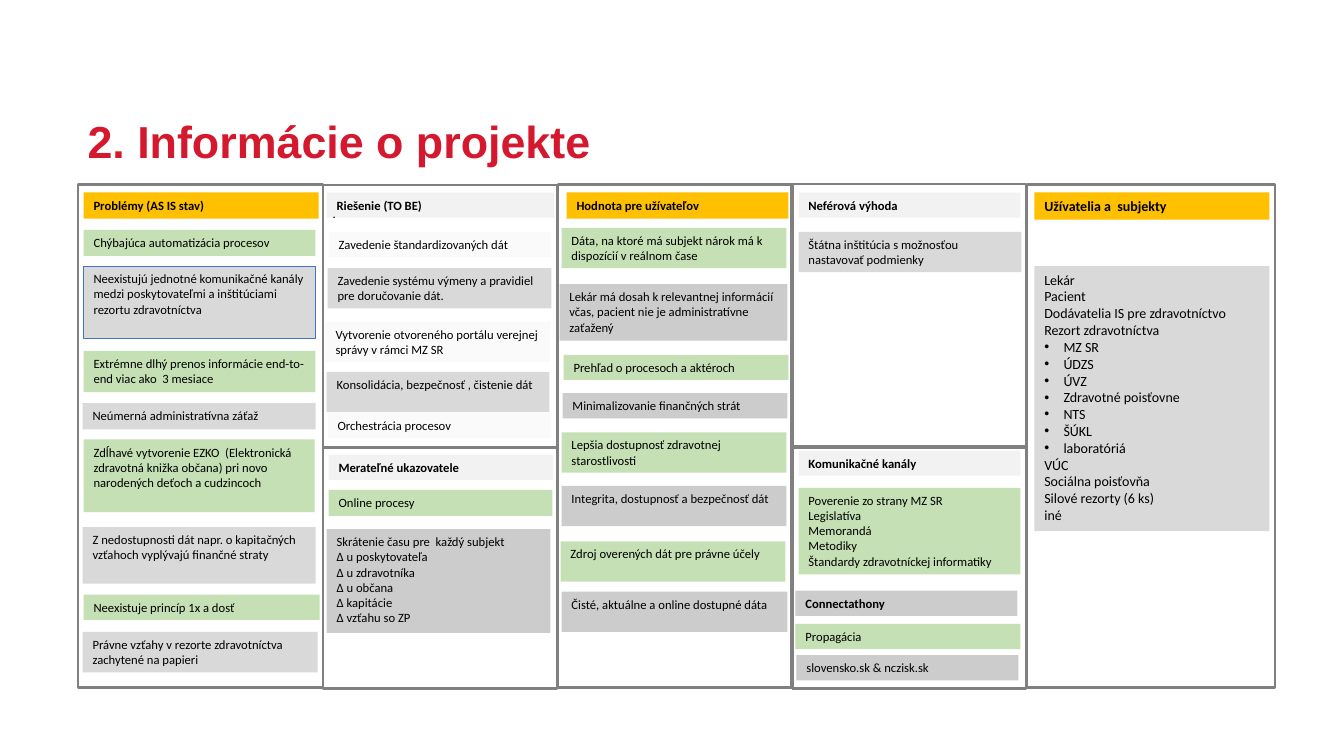
from dataclasses import dataclass

from lxml.etree import SubElement
from pptx import Presentation
from pptx.dml.color import RGBColor
from pptx.enum.shapes import MSO_SHAPE as SHAPE
from pptx.enum.text import MSO_ANCHOR as ANCHOR, PP_ALIGN as ALIGN
from pptx.oxml.ns import qn
from pptx.util import Inches, Pt


@dataclass(frozen=True)
class Theme:
    red: str = "D4182E"
    black: str = "000000"
    frame: str = "808080"
    blue: str = "4472C4"
    gold: str = "FFC000"
    head: str = "F2F2F2"
    pale: str = "FAFAFA"
    green: str = "C5E0B4"
    light: str = "D9D9D9"
    grey: str = "CCCCCC"
    title_font: str = "Arial"
    font: str = "Calibri"
    title_size: float = 32
    large: float = 10
    body: float = 9


T = Theme()

# Each region: its box, then cards as (dx, dy, width, height, fill, text, format).
# A line that starts with "• " becomes a bulleted paragraph.
PROBLEMS = (0.77, 1.83, 2.43, 4.99), [
    (0.06, 0.08, 2.33, 0.26, T.gold, "Problémy (AS IS stav)", {"bold": True}),
    (0.06, 0.45, 2.3, 0.26, T.green, "Chýbajúca automatizácia procesov", {}),
    (0.06, 0.81, 2.3, 0.72, T.light, "Neexistujú jednotné komunikačné kanály medzi "
     "poskytovateľmi a inštitúciami rezortu zdravotníctva", {"line": T.blue}),
    (0.06, 1.65, 2.3, 0.41, T.green,
     "Extrémne dlhý prenos informácie end-to-end viac ako  3 mesiace", {}),
    (0.05, 2.17, 2.31, 0.26, T.light, "Neúmerná administratívna záťaž", {}),
    (0.06, 2.53, 2.29, 0.72, T.green, "Zdĺhavé vytvorenie EZKO  (Elektronická zdravotná "
     "knižka občana) pri novo narodených deťoch a cudzincoch", {}),
    (0.05, 3.4, 2.31, 0.56, T.light, "Z nedostupnosti dát napr. o kapitačných "
     "vzťahoch vyplývajú finančné straty", {}),
    (0.06, 4.07, 2.34, 0.25, T.green, "Neexistuje princíp 1x a dosť", {}),
    (0.05, 4.44, 2.33, 0.4, T.light,
     "Právne vzťahy v rezorte zdravotníctva zachytené na papieri", {}),
]
SOLUTION = (3.2, 1.84, 2.32, 2.6), [
    (0.04, 0.07, 2.26, 0.25, T.head, "Riešenie (TO BE)", {"bold": True}),
    (0.06, 0.46, 2.21, 0.25, T.pale, "Zavedenie štandardizovaných dát", {}),
    (0.05, 0.82, 2.22, 0.4, T.light,
     "Zavedenie systému výmeny a pravidiel pre doručovanie dát.", {}),
    (0.03, 1.35, 2.23, 0.4, T.pale,
     "Vytvorenie otvoreného portálu verejnej správy v rámci MZ SR", {}),
    (0.04, 1.85, 2.21, 0.4, T.light, "Konsolidácia, bezpečnosť , čistenie dát", {}),
    (0.05, 2.26, 2.22, 0.25, T.pale, "Orchestrácia procesov", {}),
]
METRICS = (3.2, 4.44, 2.32, 2.39), [
    (0.06, 0.07, 2.23, 0.25, T.head, "Merateľné ukazovatele", {"bold": True}),
    (0.06, 0.42, 2.22, 0.26, T.green, "Online procesy", {}),
    (0.04, 0.81, 2.22, 1.03, T.grey, "Skrátenie času pre  každý subjekt\nΔ u poskytovateľa\n"
     "Δ u zdravotníka\nΔ u občana\nΔ kapitácie\nΔ vzťahu so ZP", {}),
]
VALUE = (5.53, 1.83, 2.32, 4.99), [
    (0.09, 0.08, 2.2, 0.26, T.gold, "Hodnota pre užívateľov", {"bold": True}),
    (0.04, 0.43, 2.23, 0.4, T.green,
     "Dáta, na ktoré má subjekt nárok má k dispozícií v reálnom čase", {}),
    (0.02, 0.99, 2.26, 0.56, T.grey, "Lekár má dosah k relevantnej informácií včas, "
     "pacient nie je administratívne zaťažený", {}),
    (0.06, 1.69, 2.23, 0.25, T.green, "Prehľad o procesoch a aktéroch", {}),
    (0.05, 2.07, 2.23, 0.25, T.grey, "Minimalizovanie finančných strát", {}),
    (0.04, 2.46, 2.23, 0.4, T.green, "Lepšia dostupnosť zdravotnej starostlivosti", {}),
    (0.04, 2.99, 2.23, 0.4, T.grey, "Integrita, dostupnosť a bezpečnosť dát", {}),
    (0.03, 3.54, 2.23, 0.4, T.green, "Zdroj overených dát pre právne účely", {}),
    (0.04, 4.04, 2.24, 0.4, T.grey, "Čisté, aktuálne a online dostupné dáta", {}),
]
ADVANTAGE = (7.86, 1.83, 2.32, 2.6), [
    (0.06, 0.08, 2.2, 0.25, T.head, "Neférová výhoda", {"bold": True}),
    (0.06, 0.47, 2.21, 0.4, T.light, "Štátna inštitúcia s možnosťou nastavovať podmienky", {}),
]
CHANNELS = (7.86, 4.44, 2.32, 2.39), [
    (0.06, 0.03, 2.2, 0.25, T.head, "Komunikačné kanály", {"bold": True}),
    (0.06, 0.4, 2.2, 0.86, T.green, "Poverenie zo strany MZ SR\nLegislatíva\nMemorandá\n"
     "Metodiky\nŠtandardy zdravotníckej informatiky", {}),
    (0.03, 1.42, 2.2, 0.25, T.grey, "Connectathony", {"bold": True}),
    (0.03, 1.75, 2.23, 0.25, T.green, "Propagácia", {}),
    (0.04, 2.06, 2.2, 0.25, T.grey, "slovensko.sk & nczisk.sk", {}),
]
USERS = (10.19, 1.83, 2.46, 4.99), [
    (0.07, 0.08, 2.33, 0.27, T.gold, "Užívatelia a  subjekty", {"bold": True, "size": T.large}),
    (0.07, 0.81, 2.33, 2.63, T.light, "Lekár\nPacient\nDodávatelia IS pre zdravotníctvo\n"
     "Rezort zdravotníctva\n• MZ SR\n• ÚDZS\n• ÚVZ\n• Zdravotné poisťovne\n• NTS\n• ŠÚKL\n"
     "• laboratóriá\nVÚC\nSociálna poisťovňa\nSilové rezorty (6 ks)\niné", {"size": T.large}),
]


def write(tf, text, size=T.body, font=T.font, color=T.black, bold=False,
          anchor=ANCHOR.TOP, spacing=1.0):
    tf.word_wrap = True
    tf.vertical_anchor = anchor
    for i, line in enumerate(text.split("\n")):
        p = tf.add_paragraph() if i else tf.paragraphs[0]
        p.alignment = ALIGN.LEFT
        p.line_spacing = spacing
        if line.startswith("• "):
            pPr = p._p.get_or_add_pPr()
            pPr.set("marL", str(Inches(0.19)))
            pPr.set("indent", str(-Inches(0.19)))
            SubElement(pPr, qn("a:buFont"), typeface="Arial")
            SubElement(pPr, qn("a:buChar"), char="•")
        r = p.add_run()
        r.text = line.removeprefix("• ")
        r.font.name, r.font.size, r.font.bold = font, Pt(size), bold
        r.font.color.rgb = RGBColor.from_string(color)


def add_box(slide, kind, box, fill=None, line=None, weight=0.75):
    sp = slide.shapes.add_shape(kind, *map(Inches, box))
    sp.shadow.inherit = False
    if fill:
        sp.fill.solid()
        sp.fill.fore_color.rgb = RGBColor.from_string(fill)
    else:
        sp.fill.background()
    if line:
        sp.line.color.rgb = RGBColor.from_string(line)
        sp.line.width = Pt(weight)
    else:
        sp.line.fill.background()
    return sp


def add_title(slide, box, text):
    sp = slide.shapes.add_textbox(*map(Inches, box))
    write(sp.text_frame, text, size=T.title_size, font=T.title_font, color=T.red,
          bold=True, anchor=ANCHOR.BOTTOM, spacing=0.9)


def add_region(slide, box, cards):
    """Draw a frame and its cards; return the frame."""
    frame = add_box(slide, SHAPE.ROUNDED_RECTANGLE, box, line=T.frame, weight=1.5)
    frame.adjustments[0] = 0
    left, top = box[:2]
    for dx, dy, width, height, fill, text, style in cards:
        style = dict(style)
        line = style.pop("line", None)
        sp = add_box(slide, SHAPE.RECTANGLE, (left + dx, top + dy, width, height), fill, line)
        write(sp.text_frame, text, **style)
    return frame


def main():
    prs = Presentation()
    prs.slide_width, prs.slide_height = Inches(13.33), Inches(7.5)
    slide = prs.slides.add_slide(prs.slide_layouts[6])

    add_title(slide, (0.77, 0.72, 10, 1), "2. Informácie o projekte")

    # Canvas regions; the solution frame lies on top and carries a lone dot
    for region in (PROBLEMS, METRICS, VALUE, ADVANTAGE, CHANNELS, USERS):
        add_region(slide, *region)
    frame = add_region(slide, *SOLUTION)
    slide.shapes._spTree.append(frame._element)
    frame.text_frame.margin_top = Inches(0.2)
    write(frame.text_frame, ".")

    prs.save("out.pptx")


if __name__ == "__main__":
    main()
